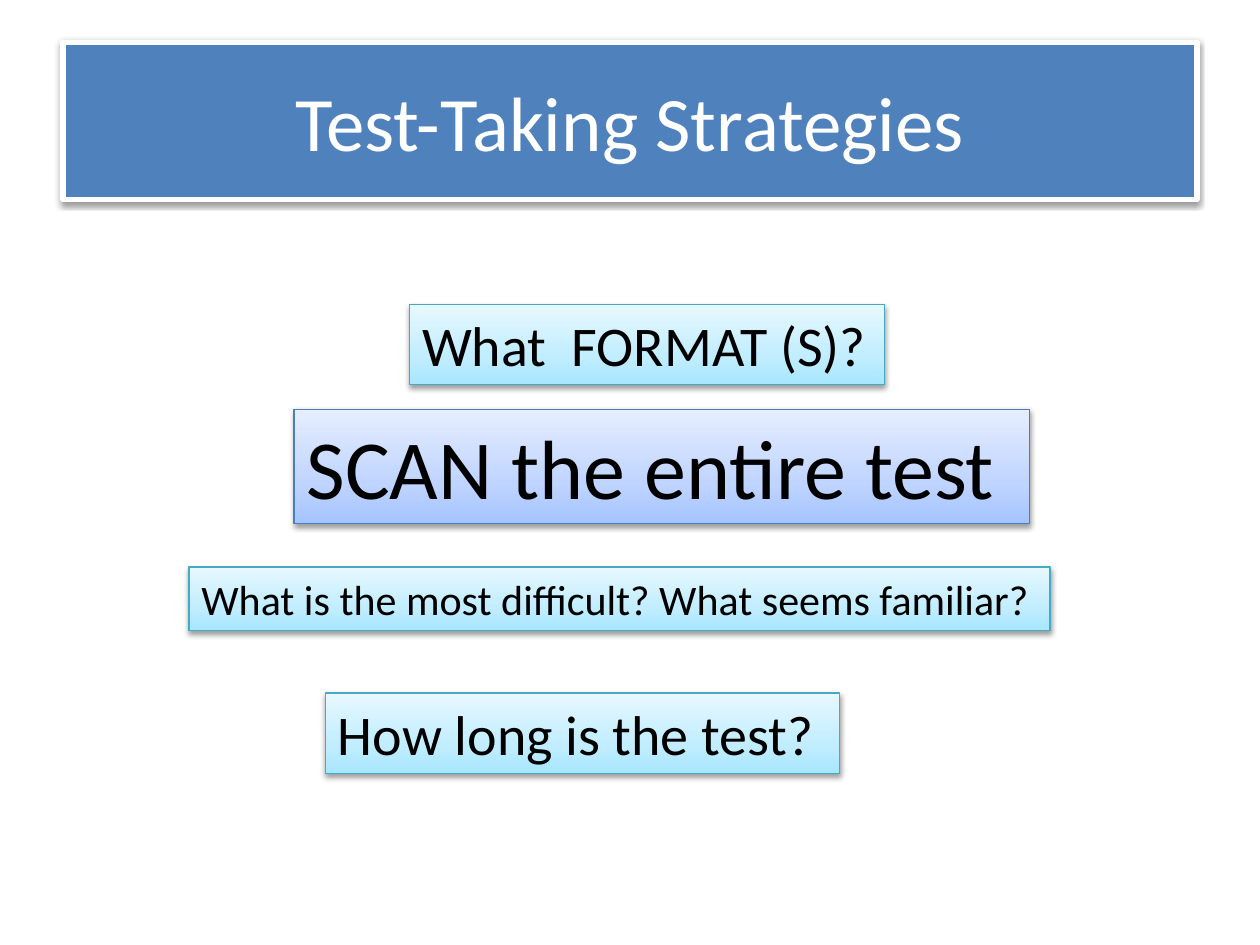
from dataclasses import dataclass

from lxml.etree import SubElement
from pptx import Presentation
from pptx.dml.color import RGBColor
from pptx.enum.text import MSO_ANCHOR, MSO_AUTO_SIZE, PP_ALIGN
from pptx.oxml.ns import qn
from pptx.util import Cm, Pt


@dataclass(frozen=True)
class Theme:
    font: str = "Calibri"
    white: str = "FFFFFF"
    black: str = "000000"
    banner: str = "4F81BD"
    blue_line: str = "4B7EBC"
    aqua_line: str = "46AAC5"
    blue_stops: tuple = ((0, "A4C4FF"), (35, "BFD4FF"), (100, "E6EEFF"))
    aqua_stops: tuple = ((0, "A7E6FF"), (35, "C1EDFF"), (100, "E7F8FF"))
    title_size: int = 44
    main_size: int = 48
    question_size: int = 32
    detail_size: int = 24


THEME = Theme()


def place(shape, box):
    shape.left, shape.top, shape.width, shape.height = map(Cm, box)


def set_line(shape, color, width):
    shape.line.color.rgb = RGBColor.from_string(color)
    shape.line.width = Pt(width)


def add_shadow(shape):
    shape.shadow.inherit = False
    effects = shape.element.spPr.find(qn("a:effectLst"))
    shadow = SubElement(effects, qn("a:outerShdw"), blurRad=str(Pt(3.1)),
                        dist=str(Pt(1.6)), dir="5400000", rotWithShape="0")
    color = SubElement(shadow, qn("a:srgbClr"), val=THEME.black)
    SubElement(color, qn("a:alpha"), val="38000")


def set_gradient(shape, stops):
    shape.fill.gradient()
    shape.fill.gradient_angle = 90
    stop_list = shape.element.spPr.find(qn("a:gradFill")).find(qn("a:gsLst"))
    for old_stop in list(stop_list):
        stop_list.remove(old_stop)
    for position, color in stops:
        stop = SubElement(stop_list, qn("a:gs"), pos=str(position * 1000))
        SubElement(stop, qn("a:srgbClr"), val=color)


def add_text(para, text, size, color):
    span = para.add_run()
    span.text = text
    span.font.name = THEME.font
    span.font.size = Pt(size)
    span.font.color.rgb = RGBColor.from_string(color)


def add_banner(page, box, text):
    title = page.shapes.title
    place(title, box)
    title.fill.solid()
    title.fill.fore_color.rgb = RGBColor.from_string(THEME.banner)
    set_line(title, THEME.white, 3)
    add_shadow(title)
    title.text_frame.vertical_anchor = MSO_ANCHOR.MIDDLE
    para = title.text_frame.paragraphs[0]
    para.alignment = PP_ALIGN.CENTER
    add_text(para, text, THEME.title_size, THEME.white)


def add_card(page, box, text, size, stops, line, wrap=True):
    card = page.shapes.add_textbox(*map(Cm, box))
    set_gradient(card, stops)
    set_line(card, line, 0.75)
    add_shadow(card)
    card.text_frame.word_wrap = wrap
    card.text_frame.auto_size = MSO_AUTO_SIZE.SHAPE_TO_FIT_TEXT
    add_text(card.text_frame.paragraphs[0], text, size, THEME.black)


def add_strategies(page, box):
    left, top, width, height = box
    blue = (THEME.blue_stops, THEME.blue_line)
    aqua = (THEME.aqua_stops, THEME.aqua_line)
    cards = [
        ((2.12, 2.11, 14.82, 2.31), "SCAN the entire test", THEME.main_size, *blue),
        ((0, 5.29, width, 1.28), "What is the most difficult? What seems familiar?",
         THEME.detail_size, *aqua),
        ((4.45, 0, 9.57, 1.62), "What  FORMAT (S)?", THEME.question_size, *aqua, False),
        ((2.75, height - 1.62, 10.37, 1.62), "How long is the test?",
         THEME.question_size, *aqua),
    ]
    for (x, y, card_width, card_height), *content in cards:
        add_card(page, (left + x, top + y, card_width, card_height), *content)


def main():
    deck = Presentation()
    deck.slide_width, deck.slide_height = Cm(25.4), Cm(19.05)
    page = deck.slides.add_slide(deck.slide_layouts[5])
    add_banner(page, (1.27, 0.85, 22.86, 3.18), "Test-Taking Strategies")
    add_strategies(page, (3.81, 6.14, 17.36, 9.45))
    deck.save("out.pptx")


if __name__ == "__main__":
    main()
